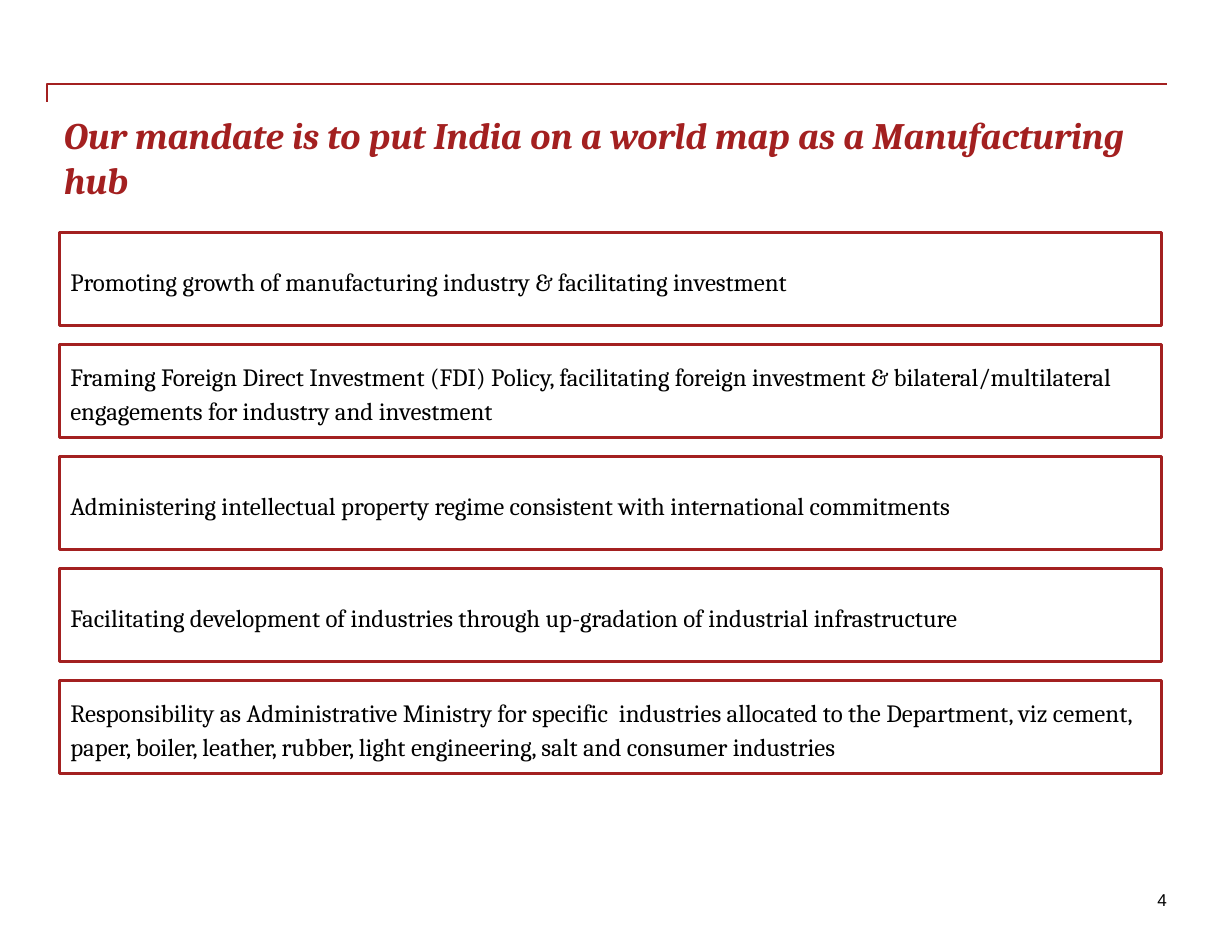
"""Build the mandate slide: a title under a rule and five framed statements."""
from pptx import Presentation
from pptx.dml.color import RGBColor
from pptx.enum.shapes import MSO_SHAPE
from pptx.enum.text import MSO_ANCHOR, MSO_AUTO_SIZE, PP_ALIGN
from pptx.util import Inches, Pt

RED = RGBColor(0xA3, 0x20, 0x20)
BLACK = RGBColor(0, 0, 0)
WHITE = RGBColor(0xFF, 0xFF, 0xFF)

LEFT, TOP, WIDE, HIGH, STEP = 0.53, 2.08, 9.84, 0.83, 1
EDGE = 10.42

BARE = dict(margin_left=0, margin_right=0, margin_top=0, margin_bottom=0,
            auto_size=MSO_AUTO_SIZE.NONE)
HEAD = dict(name="Cambria", size=Pt(24), bold=True, italic=True)
BODY = dict(name="Cambria", size=Pt(16))
PAGE = dict(name="Arial", size=Pt(11))
SPACED = dict(alignment=PP_ALIGN.LEFT, line_spacing=1.14,
              space_before=Pt(6), space_after=Pt(6))

DUTIES = [
    "Promoting growth of manufacturing industry & facilitating investment",
    "Framing Foreign Direct Investment (FDI) Policy, facilitating foreign "
    "investment & bilateral/multilateral engagements for industry and investment",
    "Administering intellectual property regime consistent with international "
    "commitments",
    "Facilitating development of industries through up-gradation of industrial "
    "infrastructure",
    "Responsibility as Administrative Ministry for specific  industries allocated "
    "to the Department, viz cement, paper, boiler, leather, rubber, light "
    "engineering, salt and consumer industries",
]


def style(item, values):
    """Set each named attribute on the item."""
    for key, value in values.items():
        setattr(item, key, value)


def write(shape, text, frame, para, font, color):
    """Fill the shape with one formatted paragraph."""
    style(shape.text_frame, frame)
    line = shape.text_frame.paragraphs[0]
    style(line, para)
    run = line.add_run()
    run.text = text
    style(run.font, font)
    run.font.color.rgb = color


deck = Presentation()
style(deck, dict(slide_width=Inches(11), slide_height=Inches(8.5)))
slide = deck.slides.add_slide(deck.slide_layouts[5])
shapes = slide.shapes

pen = shapes.build_freeform(Inches(0.42), Inches(0.91))
pen.add_line_segments([(Inches(0.42), Inches(0.75)),
                       (Inches(EDGE), Inches(0.75))], close=False)
rule = pen.convert_to_shape()
rule.shadow.inherit = False
rule.fill.background()
rule.line.color.rgb = RED
rule.line.width = Pt(1)

title = shapes.title
style(title, dict(left=Inches(0.57), top=Inches(1),
                  width=Inches(WIDE), height=Inches(0.75)))
write(title, "Our mandate is to put India on a world map as a Manufacturing hub",
      BARE | dict(vertical_anchor=MSO_ANCHOR.TOP, word_wrap=True),
      dict(alignment=PP_ALIGN.LEFT), HEAD, RED)

for row, duty in enumerate(DUTIES):
    box = shapes.add_shape(MSO_SHAPE.RECTANGLE, Inches(LEFT),
                           Inches(TOP + row * STEP), Inches(WIDE), Inches(HIGH))
    box.shadow.inherit = False
    box.fill.solid()
    box.fill.fore_color.rgb = WHITE
    box.line.color.rgb = RED
    box.line.width = Pt(2)
    write(box, duty, dict(vertical_anchor=MSO_ANCHOR.MIDDLE, word_wrap=True),
          SPACED, BODY, BLACK)

page = shapes.add_textbox(Inches(EDGE - 0.09), Inches(7.94),
                          Inches(0.09), Inches(0.19))
write(page, "4", BARE | dict(word_wrap=False),
      dict(alignment=PP_ALIGN.RIGHT), PAGE, BLACK)

deck.save("out.pptx")
